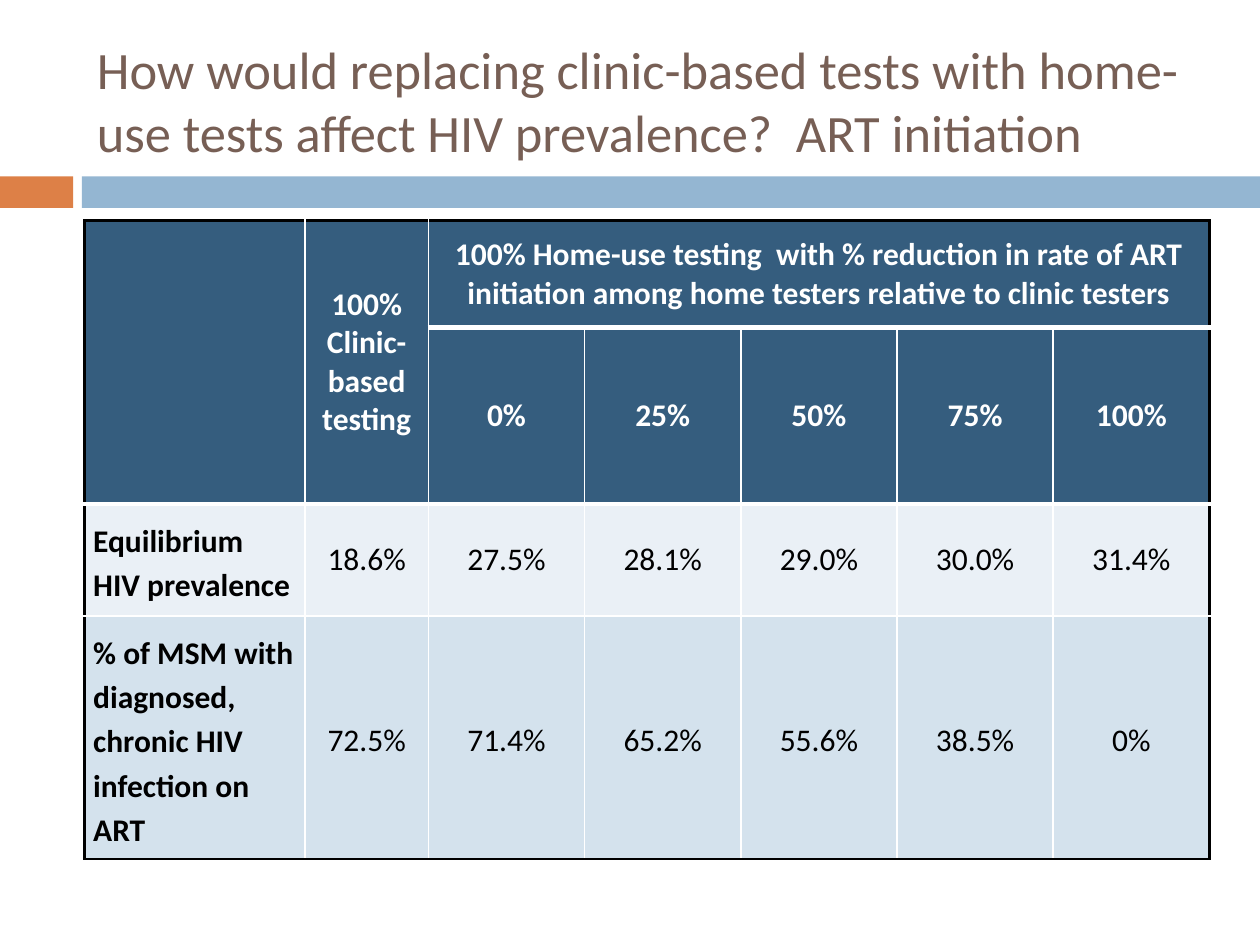
"""Build a slide tabulating HIV prevalence by reduction in ART initiation."""
import pptx
import pptx.dml.color
import pptx.enum.shapes
import pptx.enum.text
import pptx.oxml
import pptx.oxml.ns
import pptx.util

Inches = pptx.util.Inches
Pt = pptx.util.Pt
ALIGN = pptx.enum.text.PP_ALIGN
MIDDLE = pptx.enum.text.MSO_ANCHOR.MIDDLE

FONT = "Calibri"
COLORS = {
    "orange": "DD8047", "blue": "94B6D2", "title": "775F55", "header": "355D7E",
    "light": "EAF0F6", "shaded": "D4E2ED", "white": "FFFFFF", "black": "000000",
}
TITLE = ("How would replacing clinic-based tests with home-use tests affect "
         "HIV prevalence?  ART initiation")
BARS = [(0, 0.58, "orange"), (0.65, 9.35, "blue")]
ROWS = [
    ["", "100% Clinic-based testing",
     "100% Home-use testing  with % reduction in rate of ART initiation "
     "among home testers relative to clinic testers", "", "", "", ""],
    ["", "", "0%", "25%", "50%", "75%", "100%"],
    ["Equilibrium HIV prevalence",
     "18.6%", "27.5%", "28.1%", "29.0%", "30.0%", "31.4%"],
    ["% of MSM with diagnosed, chronic HIV infection on ART",
     "72.5%", "71.4%", "65.2%", "55.6%", "38.5%", "0%"],
]
MERGES = [((0, 0), (1, 0)), ((0, 1), (1, 1)), ((0, 2), (0, 6))]
ROW_FILLS = ["header", "header", "light", "shaded"]
ROW_HEIGHTS = [0.85, 0.67, 0.89, 1.51]
COLUMN_WIDTHS = [1.75, 0.98] + [1.24] * 5
HEADER_ROWS = 2


def rgb(name):
    return pptx.dml.color.RGBColor.from_string(COLORS[name])


def style_paragraph(para, size, color, bold=False):
    para.font.name = FONT
    para.font.size = Pt(size)
    para.font.bold = bold
    para.font.color.rgb = rgb(color)


def add_bars(page):
    for left, width, color in BARS:
        bar = page.shapes.add_shape(
            pptx.enum.shapes.MSO_SHAPE.RECTANGLE,
            Inches(left), Inches(1.4), Inches(width), Inches(0.25))
        bar.shadow.inherit = False
        bar.fill.solid()
        bar.fill.fore_color.rgb = rgb(color)
        bar.line.fill.background()


def add_title(page):
    box = page.shapes.add_textbox(
        Inches(0.67), Inches(0.25), Inches(8.92), Inches(1.08))
    frame = box.text_frame
    frame.word_wrap = True
    frame.vertical_anchor = MIDDLE
    frame.text = TITLE
    style_paragraph(frame.paragraphs[0], 30, "title")


def set_borders(cell, row, column):
    last_row = row + cell.span_height - 1
    last_column = column + cell.span_width - 1
    outer, inner, rule = ("black", 1.5), ("white", 1), ("white", 3)
    sides = {
        "L": outer if column == 0 else inner,
        "R": outer if last_column == len(COLUMN_WIDTHS) - 1 else inner,
        "T": outer if row == 0 else rule if row <= HEADER_ROWS else inner,
        "B": outer if last_row == len(ROWS) - 1
        else rule if last_row < HEADER_ROWS else inner,
    }
    properties = cell._tc.get_or_add_tcPr()
    for side, (color, width) in sides.items():
        properties.append(pptx.oxml.parse_xml(
            f'<a:ln{side} {pptx.oxml.ns.nsdecls("a")} w="{Pt(width)}">'
            f'<a:solidFill><a:srgbClr val="{COLORS[color]}"/></a:solidFill>'
            f'</a:ln{side}>'))


def format_cell(cell, row, column):
    is_header = row < HEADER_ROWS
    is_label = column == 0
    if not cell.is_spanned:
        set_borders(cell, row, column)
    cell.fill.solid()
    cell.fill.fore_color.rgb = rgb(ROW_FILLS[row])
    cell.vertical_anchor = MIDDLE
    cell.margin_left = cell.margin_right = Inches(0.1 if is_header else 0.07)
    cell.margin_top = cell.margin_bottom = Inches(0.1)
    if ROWS[row][column]:
        cell.text = ROWS[row][column]
        para = cell.text_frame.paragraphs[0]
        para.alignment = ALIGN.LEFT if is_label else ALIGN.CENTER
        if row == len(ROWS) - 1 or is_label:
            para.line_spacing = 1.15
        style_paragraph(para, 18, "white" if is_header else "black",
                        is_header or is_label)


def add_results_table(page):
    table = page.shapes.add_table(
        len(ROWS), len(COLUMN_WIDTHS), Inches(0.67), Inches(1.75),
        Inches(sum(COLUMN_WIDTHS)), Inches(sum(ROW_HEIGHTS))).table
    for column, width in zip(table.columns, COLUMN_WIDTHS):
        column.width = Inches(width)
    for row, height in zip(table.rows, ROW_HEIGHTS):
        row.height = Inches(height)
    for first, last in MERGES:
        table.cell(*first).merge(table.cell(*last))
    for row in range(len(ROWS)):
        for column in range(len(COLUMN_WIDTHS)):
            format_cell(table.cell(row, column), row, column)


def main():
    deck = pptx.Presentation()
    deck.slide_width = Inches(10)
    deck.slide_height = Inches(7.5)
    page = deck.slides.add_slide(deck.slide_layouts[6])
    add_bars(page)
    add_title(page)
    add_results_table(page)
    deck.save("out.pptx")


if __name__ == "__main__":
    main()
